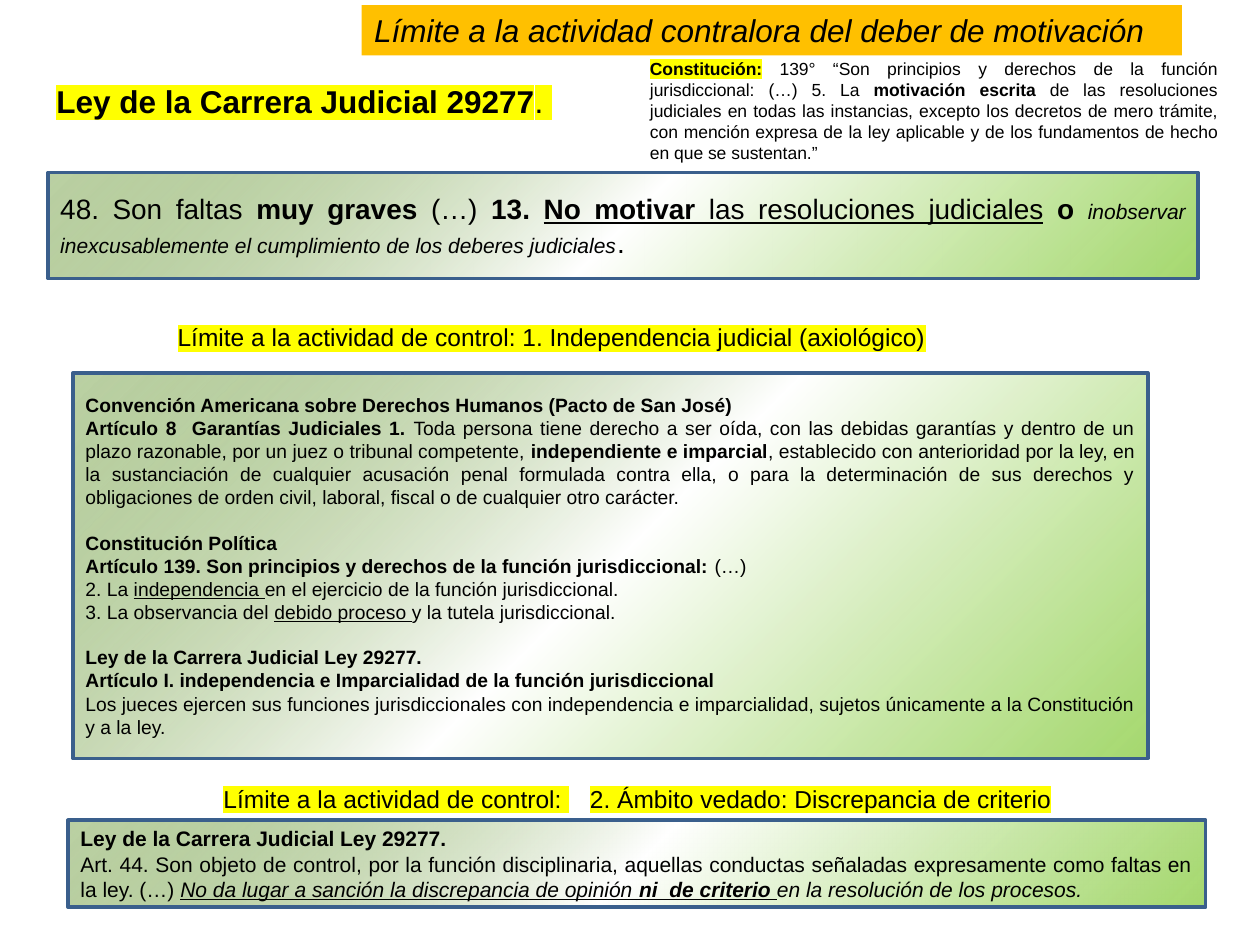
import pptx
import pptx.dml.color
import pptx.enum.shapes
import pptx.enum.text
import pptx.oxml
import pptx.oxml.ns
import pptx.util
from pptx.util import Inches

ALIGN = pptx.enum.text.PP_ALIGN
ANCHOR = pptx.enum.text.MSO_ANCHOR
YELLOW = "FFFF00"
NS = pptx.oxml.ns.nsdecls("a")
GRADIENT = f"""<a:gradFill {NS} rotWithShape="1"><a:gsLst>
<a:gs pos="0"><a:srgbClr val="99D35B"><a:alpha val="88000"/></a:srgbClr></a:gs>
<a:gs pos="50000"><a:srgbClr val="FFFFFF"/></a:gs>
<a:gs pos="100000"><a:srgbClr val="5E9127"><a:alpha val="42000"/></a:srgbClr></a:gs>
</a:gsLst><a:path path="circle"><a:fillToRect l="100000" t="100000"/></a:path></a:gradFill>"""


def rgb(value):
    return pptx.dml.color.RGBColor.from_string(value)


class Deck:
    font, ink, border = "Arial", "000000", "3A5F8C"

    def __init__(self, prs):
        self.s = prs.slides.add_slide(prs.slide_layouts[6])

    def add_runs(self, p, runs, size, align):
        """Fill p with (text, flags[, size[, spacing]]) runs; flags: b, i, u, h (highlight)."""
        p.alignment = align
        for text, flags, *extra in runs:
            r = p.add_run()
            r.text = text
            f = r.font
            f.name, f.size = self.font, pptx.util.Pt(extra[0] if extra else size)
            f.bold, f.italic, f.underline = "b" in flags, "i" in flags, "u" in flags
            f.color.rgb = rgb(self.ink)
            rpr = r._r.get_or_add_rPr()
            if "h" in flags:
                rpr.find(pptx.oxml.ns.qn("a:solidFill")).addnext(pptx.oxml.parse_xml(
                    f'<a:highlight {NS}><a:srgbClr val="{YELLOW}"/></a:highlight>'))
            if len(extra) > 1:
                rpr.set("spc", str(extra[1] * 100))

    def fill_text(self, sp, paragraphs, size, align, wrap, anchor, gaps=()):
        """Add the paragraphs; those whose index is in gaps start after an empty line."""
        tf = sp.text_frame
        tf.word_wrap, tf.vertical_anchor = wrap, anchor
        for i, runs in enumerate(paragraphs):
            p = tf.add_paragraph() if i else tf.paragraphs[0]
            self.add_runs(p, runs, size, align)
            if i in gaps:
                p.space_before = pptx.util.Pt(size * 1.15)

    def rect(self, box):
        sp = self.s.shapes.add_shape(
            pptx.enum.shapes.MSO_SHAPE.RECTANGLE, *map(Inches, box))
        sp.shadow.inherit = False
        return sp

    def banner(self, box, runs, size, color):
        sp = self.rect(box)
        sp.fill.solid()
        sp.fill.fore_color.rgb = rgb(color)
        sp.line.fill.background()
        self.fill_text(sp, [runs], size, ALIGN.LEFT, False, ANCHOR.TOP)

    def panel(self, box, paragraphs, size, gaps=()):
        sp = self.rect(box)
        sp.line.color.rgb = rgb(self.border)
        sp.line.width = pptx.util.Pt(2)
        geometry = sp._element.spPr.find(pptx.oxml.ns.qn("a:prstGeom"))
        geometry.addnext(pptx.oxml.parse_xml(GRADIENT))
        self.fill_text(sp, paragraphs, size, ALIGN.JUSTIFY, True, ANCHOR.MIDDLE, gaps)

    def text(self, box, runs, size, align=ALIGN.CENTER, wrap=False):
        sp = self.s.shapes.add_textbox(*map(Inches, box))
        self.fill_text(sp, [runs], size, align, wrap, ANCHOR.TOP)


def main():
    prs = pptx.Presentation()
    prs.slide_width, prs.slide_height = Inches(10), Inches(7.5)
    d = Deck(prs)

    d.banner((2.87, 0.04, 6.51, 0.4),
             [("Límite a la actividad contralora del deber de motivación", "i")], 18, "FFC000")
    d.panel((0.38, 1.37, 9.13, 0.84), [[
        ("48. Son faltas ", ""), ("muy graves ", "b"), ("(…) ", ""), ("13. ", "b"),
        ("No motivar ", "bu"), ("las resoluciones judiciales", "u"), (" ", ""), ("o ", "b"),
        ("inobservar inexcusablemente el cumplimiento de los deberes judiciales", "i", 12),
        (". ", "")]], 16)
    d.text((0.35, 0.6, 4.17, 0.37),
           [("Ley de la Carrera Judicial 29277", "bh"), (". ", "h")], 18, ALIGN.LEFT)
    d.panel((0.58, 2.96, 8.53, 3.06), [
        [("Convención Americana sobre Derechos Humanos (Pacto de San José)", "b")],
        [("Artículo 8  Garantías Judiciales 1. ", "b"),
         ("Toda persona tiene derecho a ser oída, con las debidas garantías y dentro de un "
          "plazo razonable, por un juez o tribunal competente, ", ""),
         ("independiente e imparcial", "b"),
         (", establecido con anterioridad por la ley, en la sustanciación de cualquier "
          "acusación penal formulada contra ella, o para la determinación de sus derechos y "
          "obligaciones de orden civil, laboral, fiscal o de cualquier otro carácter. ", "")],
        [("Constitución Política", "b")],
        [("Artículo 139. Son principios y derechos de la función jurisdiccional: ", "b"),
         ("(…) ", "")],
        [("2. La ", ""), ("independencia ", "u"),
         ("en el ejercicio de la función jurisdiccional.", "")],
        [("3. La observancia del ", ""), ("debido proceso ", "u"),
         ("y la tutela jurisdiccional.", "")],
        [("Ley de la Carrera Judicial Ley 29277.", "b")],
        [("Artículo I. independencia e Imparcialidad de la función jurisdiccional ", "b")],
        [("Los jueces ejercen sus funciones jurisdiccionales con independencia e "
          "imparcialidad, sujetos únicamente a la Constitución y a la ley.", "")],
    ], 11, gaps=(2, 6))
    d.text((1.3, 2.51, 6.16, 0.34),
           [("Límite a la actividad de control: 1. Independencia judicial (axiológico)", "h")], 14)
    d.panel((0.54, 6.51, 9.03, 0.69), [
        [("Ley de la Carrera Judicial Ley 29277.", "b")],
        [("Art. 44. Son objeto de control, por la función disciplinaria, aquellas conductas "
          "señaladas expresamente como faltas en la ley. (…) ", ""),
         ("No da lugar a sanción la discrepancia de opinión ", "iu"),
         ("ni  de criterio ", "biu"), ("en la resolución de los procesos.", "i")],
    ], 12)
    d.text((1.66, 6.17, 6.8, 0.34),
           [("Límite a la actividad de control:", "h"), (" ", "h", 14, 12),
            ("2. Ámbito vedado: Discrepancia de criterio", "h")], 14)
    d.text((5.06, 0.41, 4.7, 0.94), [
        ("Constitución:", "bh"),
        (" 139° “Son principios y derechos de la función jurisdiccional: (…) 5. La ", ""),
        ("motivación escrita ", "b"),
        ("de las resoluciones judiciales en todas las instancias, excepto los decretos de mero "
         "trámite, con mención expresa de la ley aplicable y de los fundamentos de hecho en que "
         "se sustentan.” ", "")], 10, ALIGN.JUSTIFY, wrap=True)

    prs.save("out.pptx")


if __name__ == "__main__":
    main()
